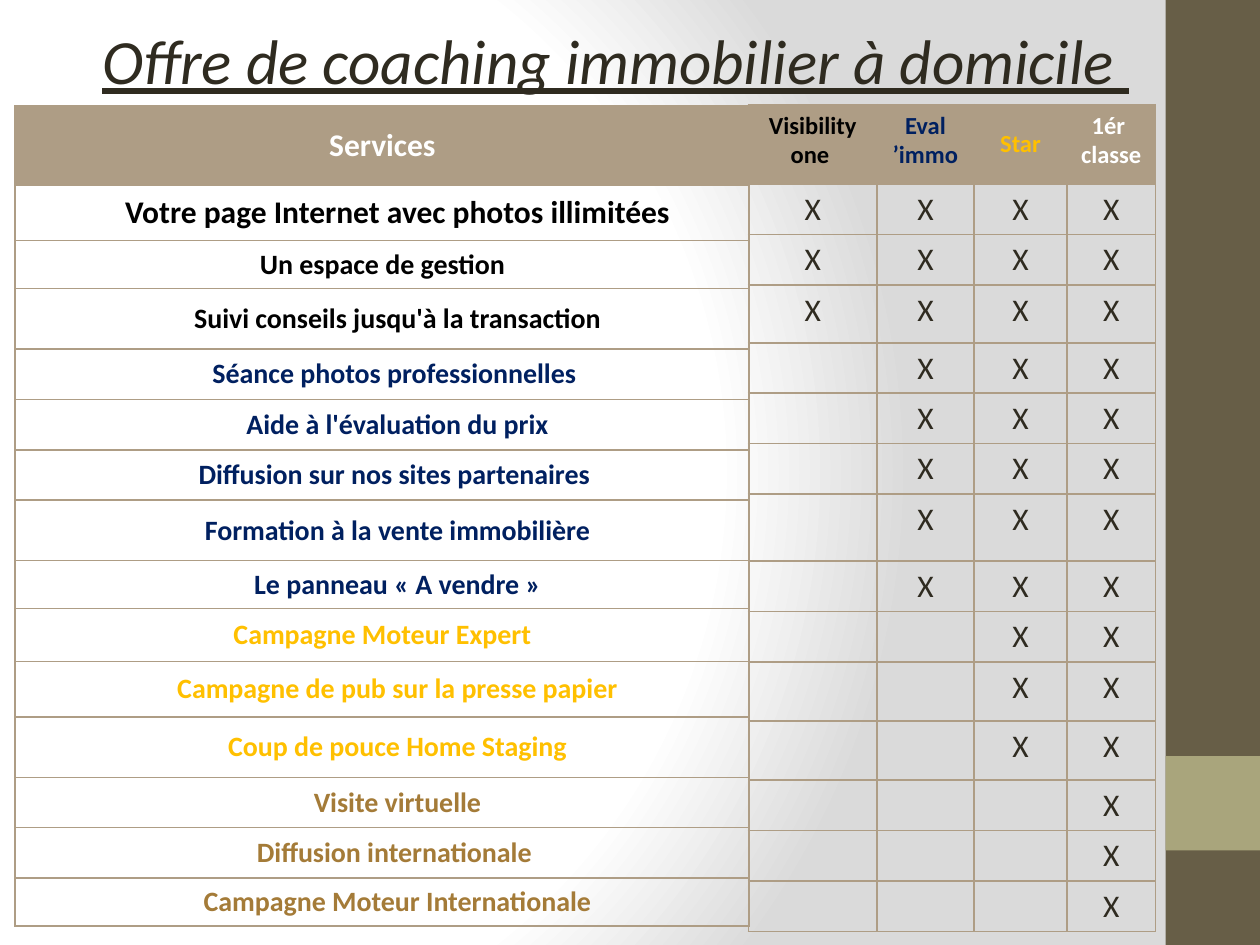
"""Build the slide comparing home real-estate coaching plans."""
from lxml import etree
from pptx import Presentation
from pptx import util as u
from pptx.dml.color import RGBColor
from pptx.enum import shapes, text
from pptx.oxml import parse_xml
from pptx.oxml.ns import qn

FONT = "Calibri"
BLACK = RGBColor(0x00, 0x00, 0x00)
WHITE = RGBColor(0xFF, 0xFF, 0xFF)
NAVY = RGBColor(0x00, 0x20, 0x60)
GOLD = RGBColor(0xFF, 0xC0, 0x00)
BRONZE = RGBColor(0xA4, 0x7B, 0x38)
INK = RGBColor(0x2F, 0x2B, 0x20)
TAN = RGBColor(0xAE, 0x9D, 0x85)
BROWN = RGBColor(0x67, 0x5E, 0x47)
OLIVE = RGBColor(0xA9, 0xA5, 0x7C)

TITLE = "Offre de coaching immobilier à domicile "
HEADER_HEIGHT = 0.63
PLANS = [
    ("Visibility one ", BLACK, 1.02),
    ("Eval\n’immo", NAVY, 0.77),
    ("Star", GOLD, 0.74),
    ("1ér \nclasse", WHITE, 0.7),
]
TIER_COLORS = [BLACK, NAVY, GOLD, BRONZE]
SERVICES = [
    ("Votre page Internet avec photos illimitées", 0, 0.44, 0.4),
    ("Un espace de gestion", 0, 0.38, 0.4),
    ("Suivi conseils jusqu'à la transaction", 0, 0.48, 0.46),
    ("Séance photos professionnelles ", 1, 0.4, 0.4),
    ("Aide à l'évaluation du prix", 1, 0.4, 0.4),
    ("Diffusion sur nos sites partenaires ", 1, 0.4, 0.4),
    ("Formation à la vente immobilière", 1, 0.48, 0.53),
    ("Le panneau «\u00a0A vendre »", 1, 0.38, 0.4),
    ("Campagne Moteur Expert", 2, 0.42, 0.4),
    ("Campagne de pub sur la presse papier", 2, 0.44, 0.47),
    ("Coup de pouce Home Staging", 2, 0.48, 0.47),
    ("Visite virtuelle", 3, 0.4, 0.4),
    ("Diffusion internationale ", 3, 0.4, 0.4),
    ("Campagne Moteur Internationale", 3, 0.38, 0.4),
]
UNINDENTED = {"Un espace de gestion", "Campagne Moteur Expert"}
BACKGROUND = """
<p:bg xmlns:p="http://schemas.openxmlformats.org/presentationml/2006/main"
      xmlns:a="http://schemas.openxmlformats.org/drawingml/2006/main">
  <p:bgPr><a:gradFill rotWithShape="1"><a:gsLst>
    <a:gs pos="0"><a:srgbClr val="FFFFFF"/></a:gs>
    <a:gs pos="75000"><a:srgbClr val="FFFFFF"/></a:gs>
    <a:gs pos="100000"><a:srgbClr val="DADADA"/></a:gs>
  </a:gsLst><a:path path="circle">
    <a:fillToRect l="20000" t="50000" r="100000" b="50000"/>
  </a:path></a:gradFill><a:effectLst/></p:bgPr>
</p:bg>"""


def add_bar(slide, top, height, color):
    bar = slide.shapes.add_shape(
        shapes.MSO_SHAPE.RECTANGLE,
        u.Inches(9.25), u.Inches(top), u.Inches(0.75), u.Inches(height))
    bar.shadow.inherit = False
    bar.fill.solid()
    bar.fill.fore_color.rgb = color
    bar.line.fill.background()


def add_borders(cell):
    properties = cell._tc.get_or_add_tcPr()
    for index, side in enumerate(("lnL", "lnR", "lnT", "lnB")):
        line = etree.Element(qn(f"a:{side}"), w=str(u.Pt(1)))
        fill = etree.SubElement(line, qn("a:solidFill"))
        etree.SubElement(fill, qn("a:srgbClr"), val=str(TAN))
        properties.insert(index, line)


def write_cell(cell, words, size, color, bold=True, middle=True):
    cell.text_frame.text = words
    if middle:
        cell.vertical_anchor = text.MSO_ANCHOR.MIDDLE
    for paragraph in cell.text_frame.paragraphs:
        paragraph.alignment = text.PP_ALIGN.CENTER
        for run in paragraph.runs:
            run.font.name = FONT
            run.font.size = u.Pt(size)
            run.font.bold = bold
            run.font.color.rgb = color


def add_grid(slide, left, top, widths, heights):
    table = slide.shapes.add_table(
        len(heights), len(widths), u.Inches(left), u.Inches(top),
        u.Inches(sum(widths)), u.Inches(sum(heights))).table
    table.first_row = table.horz_banding = False
    for column, width in zip(table.columns, widths):
        column.width = u.Inches(width)
    for index, (row, height) in enumerate(zip(table.rows, heights)):
        row.height = u.Inches(height)
        for cell in row.cells:
            if index == 0:
                cell.fill.solid()
                cell.fill.fore_color.rgb = TAN
            else:
                cell.fill.background()
            add_borders(cell)
    return table


def add_services(slide):
    heights = [HEADER_HEIGHT] + [service[2] for service in SERVICES]
    table = add_grid(slide, 0.12, 0.84, [5.83], heights)
    write_cell(table.cell(0, 0), "Services", 18, WHITE)
    for row, (label, tier, *_) in enumerate(SERVICES, 1):
        cell = table.cell(row, 0)
        write_cell(cell, label, 18 if row == 1 else 16, TIER_COLORS[tier])
        if label not in UNINDENTED:
            properties = cell.text_frame.paragraphs[0]._p.get_or_add_pPr()
            properties.set("marL", str(u.Inches(0.24)))
            properties.set("indent", "0")


def add_plans(slide):
    heights = [HEADER_HEIGHT] + [service[3] for service in SERVICES]
    table = add_grid(slide, 5.94, 0.83, [plan[2] for plan in PLANS], heights)
    for column, (name, color, _) in enumerate(PLANS):
        write_cell(table.cell(0, column), name, 14, color, middle=name == "Star")
        for row, service in enumerate(SERVICES, 1):
            if column >= service[1]:
                write_cell(table.cell(row, column), "X", 18, INK, False, False)


def add_title(slide):
    title = slide.shapes.title
    title.left, title.top = u.Inches(0.2), u.Inches(0.12)
    title.width, title.height = u.Inches(9.37), u.Inches(0.71)
    frame = title.text_frame
    frame.text = TITLE
    frame.word_wrap = True
    frame.auto_size = text.MSO_AUTO_SIZE.SHAPE_TO_FIT_TEXT
    frame.vertical_anchor = text.MSO_ANCHOR.TOP
    paragraph = frame.paragraphs[0]
    paragraph.alignment = text.PP_ALIGN.CENTER
    font = paragraph.runs[0].font
    font.name, font.size = FONT, u.Pt(36)
    font.bold, font.italic, font.underline = False, True, True
    font.color.rgb = INK


def main():
    presentation = Presentation()
    presentation.slide_width = u.Inches(10)
    presentation.slide_height = u.Inches(7.5)
    slide = presentation.slides.add_slide(presentation.slide_layouts[5])
    slide.element.cSld.insert(0, parse_xml(BACKGROUND))
    add_bar(slide, 0, 7.5, BROWN)
    add_bar(slide, 6, 0.75, OLIVE)
    add_services(slide)
    add_title(slide)
    add_plans(slide)
    presentation.save("out.pptx")


if __name__ == "__main__":
    main()
